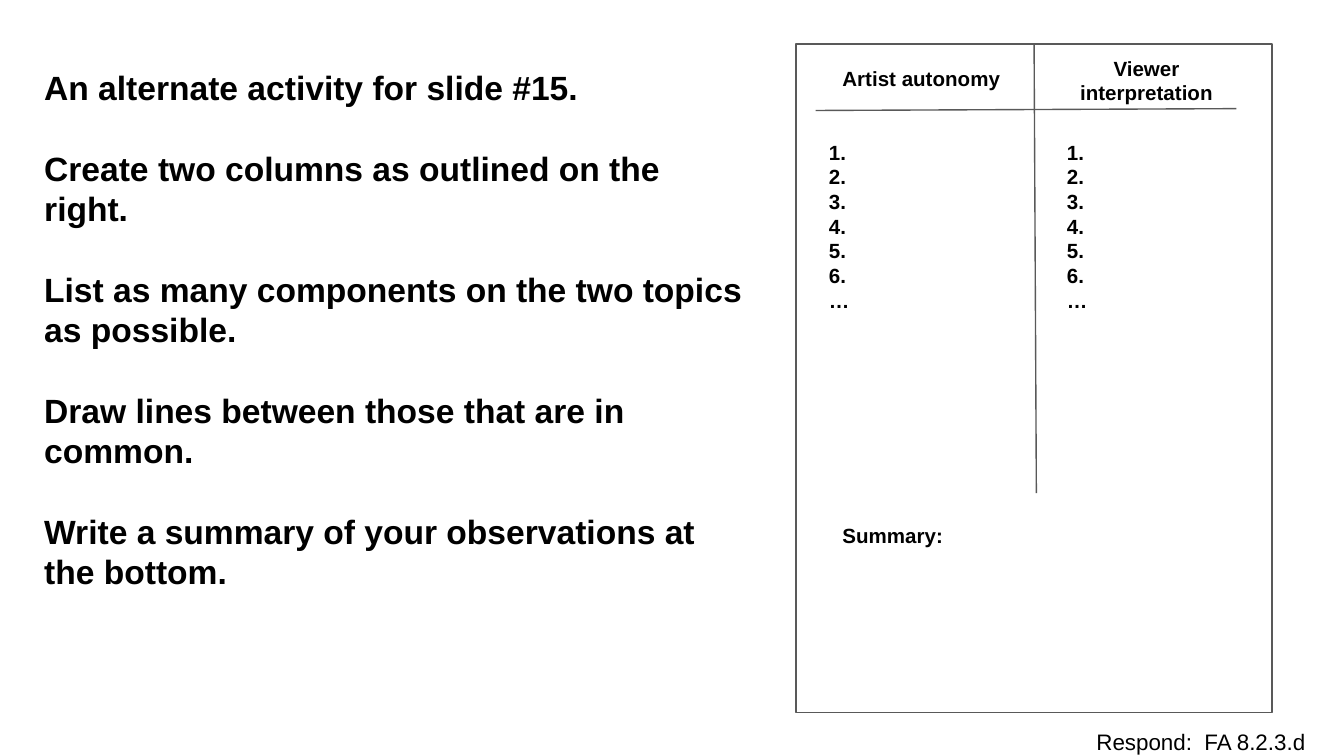
from dataclasses import dataclass

from lxml import etree
from pptx import Presentation
from pptx.dml.color import RGBColor
from pptx.enum.shapes import MSO_CONNECTOR, MSO_SHAPE
from pptx.enum.text import PP_ALIGN
from pptx.oxml.ns import qn
from pptx.util import Pt


@dataclass(frozen=True)
class Theme:
    font: str = "Arial"
    ink: RGBColor = RGBColor(0x00, 0x00, 0x00)
    rule: RGBColor = RGBColor(0x59, 0x59, 0x59)
    paper: RGBColor = RGBColor(0xFF, 0xFF, 0xFF)
    body: int = 18
    note: int = 11
    code: int = 12
    rule_width: float = 0.75


theme = Theme()


def add_text(s, x, y, w, h, lines, size, bold=True, align=PP_ALIGN.LEFT, gap=0):
    """Add a text box with one paragraph per line and gap points between them."""
    tf = s.shapes.add_textbox(Pt(x), Pt(y), Pt(w), Pt(h)).text_frame
    tf.word_wrap = True
    tf.margin_left = tf.margin_right = tf.margin_top = tf.margin_bottom = Pt(7.2)
    tf.text = "\n".join(lines)
    for i, p in enumerate(tf.paragraphs):
        p.alignment = align
        p.space_before = Pt(gap if i else 0)
        for r in p.runs:
            r.font.name = theme.font
            r.font.size = Pt(size)
            r.font.bold = bold
            r.font.color.rgb = theme.ink


prs = Presentation()
prs.slide_width, prs.slide_height = Pt(720), Pt(405)
s = prs.slides.add_slide(prs.slide_layouts[6])

# Worksheet page
page = s.shapes.add_shape(MSO_SHAPE.RECTANGLE, Pt(426.5), Pt(23.6), Pt(255), Pt(358))
page.shadow.inherit = False
page.fill.solid()
page.fill.fore_color.rgb = theme.paper
page.line.color.rgb = theme.rule
page.line.width = Pt(theme.rule_width)

# Instructions
steps = [
    "An alternate activity for slide #15.",
    "Create two columns as outlined on the right.",
    "List as many components on the two topics as possible.",
    "Draw lines between those that are in common.",
    "Write a summary of your observations at the bottom.",
]
add_text(s, 16.6, 28.8, 391, 353, steps, theme.body, gap=21.6)

# Column divider and heading rule
divider = s.shapes.add_connector(
    MSO_CONNECTOR.STRAIGHT, Pt(554), Pt(23.6), Pt(555.2), Pt(264.2))
divider.begin_connect(page, 0)
heading_rule = s.shapes.add_connector(
    MSO_CONNECTOR.STRAIGHT, Pt(437), Pt(59.2), Pt(662.4), Pt(58.2))
for line in (divider, heading_rule):
    line.line.color.rgb = theme.rule
    line.line.width = Pt(theme.rule_width)
    etree.SubElement(line._element.spPr, qn("a:effectLst"))

# Headings and summary
add_text(s, 444.2, 28.8, 99.4, 21.6, ["Artist autonomy"], theme.note)
add_text(s, 564.5, 22.6, 99.4, 21.6, ["Viewer interpretation"], theme.note,
         align=PP_ALIGN.CENTER)
add_text(s, 444.2, 273.6, 99.4, 21.6, ["Summary:"], theme.note)

# Numbered lists
numbers = [f"{n}." for n in range(1, 7)] + ["…"]
for x in (437, 564.5):
    add_text(s, x, 67.7, 25.2, 219.6, numbers, theme.note)

# Standard code
add_text(s, 580.3, 383, 131.8, 26, ["Respond:  FA 8.2.3.d"], theme.code, bold=False)

prs.save("out.pptx")
